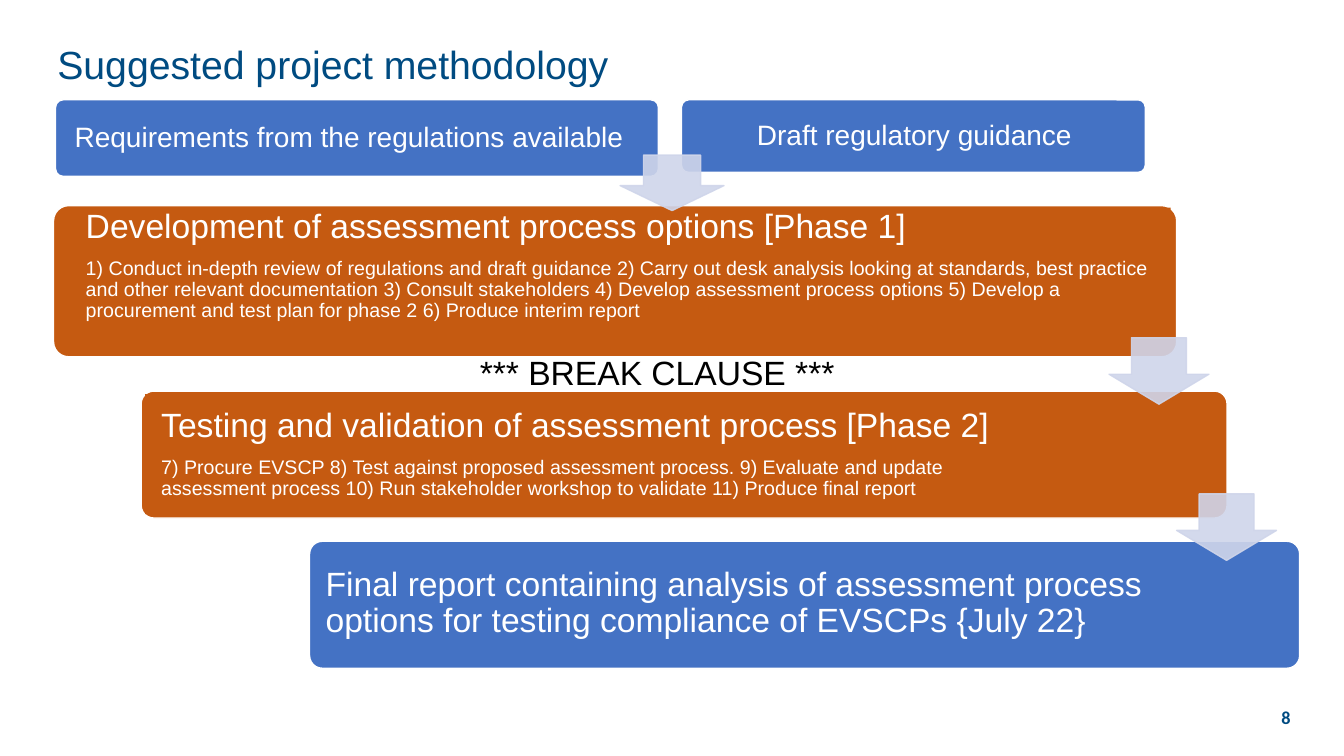
from lxml import etree
from pptx import Presentation
from pptx.dml.color import RGBColor
from pptx.enum.shapes import MSO_SHAPE as Shape
from pptx.enum.text import MSO_ANCHOR as Anchor, PP_ALIGN as Align
from pptx.oxml.ns import qn
from pptx.util import Inches, Pt

WIDE, HIGH = Inches(13.33), Inches(7.5)
NAVY, BLUE, RUST, PALE = "004B81", "4472C4", "C55A11", "CFD5EA"
WHITE, BLACK = "FFFFFF", "000000"
PAD = 0.16


def hue(code):
    return RGBColor.from_string(code)


def place(box):
    """Turn percentages of the slide into lengths."""
    return [int(share * side / 100) for share, side in zip(box, (WIDE, HIGH) * 2)]


def paint(shape, fill, line=None):
    shape.shadow.inherit = False
    shape.fill.solid()
    shape.fill.fore_color.rgb = hue(fill)
    if line:
        shape.line.color.rgb = hue(line)
        shape.line.width = Pt(1)
    else:
        shape.line.fill.background()


def write(shape, rows, color, align=Align.LEFT, anchor=Anchor.MIDDLE,
          font="Arial", bold=False, space=0.9, pads=None):
    """Fill a shape with rows of (text, size)."""
    frame = shape.text_frame
    frame.word_wrap = True
    frame.vertical_anchor = anchor
    if pads:
        (frame.margin_left, frame.margin_top,
         frame.margin_right, frame.margin_bottom) = map(Inches, pads)
    for spot, (text, size) in enumerate(rows):
        para = frame.add_paragraph() if spot else frame.paragraphs[0]
        para.alignment = align
        para.line_spacing = space
        if spot < len(rows) - 1:
            para.space_after = Pt(9)
        run = para.add_run()
        run.text = text
        run.font.name, run.font.size, run.font.bold = font, Pt(size), bold
        run.font.color.rgb = hue(color)


def note(slide, box, text, size, color, **style):
    write(slide.shapes.add_textbox(*place(box)), [(text, size)], color, **style)


def step(slide, bar, label, fill, rows, top=PAD, **style):
    """Draw a rounded bar with its label; phase labels are filled."""
    back = slide.shapes.add_shape(Shape.ROUNDED_RECTANGLE, *place(bar))
    back.adjustments[0] = 0.1
    paint(back, fill, WHITE)
    if fill == RUST:
        face = slide.shapes.add_shape(Shape.RECTANGLE, *place(label))
        paint(face, fill)
    else:
        face = slide.shapes.add_textbox(*place(label))
    write(face, rows, WHITE, pads=(PAD, top, PAD, PAD), **style)


def arrow(slide, box):
    shape = slide.shapes.add_shape(Shape.DOWN_ARROW, *place(box))
    shape.adjustments[0], shape.adjustments[1] = 0.55, 0.45
    paint(shape, PALE, PALE)
    for color in shape._element.spPr.iter(qn("a:srgbClr")):
        etree.SubElement(color, qn("a:alpha")).set("val", "90000")


def main():
    deck = Presentation()
    deck.slide_width, deck.slide_height = WIDE, HIGH
    slide = deck.slides.add_slide(deck.slide_layouts[6])

    note(slide, (3.53, 4.53, 93.17, 8.53), "Suggested project methodology", 28, NAVY)
    note(slide, (90.62, 92.27, 6.15, 5.33), "8", 13, NAVY,
         align=Align.RIGHT, font="Calibri", bold=True, space=1.0)

    step(slide, (4.13, 13.2, 44.86, 10.13), (4.35, 13.47, 43.29, 9.6), BLUE,
         [("Requirements from the regulations available", 20)])
    step(slide, (3.98, 27.2, 83.57, 20), (5.18, 27.47, 81.92, 18.8), RUST, [
        ("Development of assessment process options [Phase 1]", 24),
        ("1) Conduct in-depth review of regulations and draft guidance "
         "2) Carry out desk analysis looking at standards, best practice and "
         "other relevant documentation 3) Consult stakeholders "
         "4) Develop assessment process options 5) Develop a procurement and "
         "test plan for phase 2 6) Produce interim report", 14),
    ], top=0.02, anchor=Anchor.TOP)
    step(slide, (10.5, 51.73, 80.8, 16.8), (10.8, 52.13, 65.12, 15.87), RUST, [
        ("Testing and validation of assessment process [Phase 2]", 24),
        ("7) Procure EVSCP 8) Test against proposed assessment process. "
         "9) Evaluate and update assessment process 10) Run stakeholder "
         "workshop to validate 11) Produce final report", 14),
    ])
    arrow(slide, (82.52, 44.67, 7.43, 8.8))
    step(slide, (23.03, 71.6, 73.67, 16.8), (23.03, 71.87, 71.34, 15.87), BLUE,
         [("Final report containing analysis of assessment process options "
           "for testing compliance of EVSCPs {July 22}", 24)])
    arrow(slide, (87.55, 65.33, 7.43, 8.8))
    step(slide, (50.71, 13.2, 34.51, 9.6), (50.86, 13.47, 34.36, 9.07), BLUE,
         [("Draft regulatory guidance", 20)], align=Align.CENTER)
    arrow(slide, (46.14, 20.53, 7.73, 7.33))
    note(slide, (34.96, 45.87, 34.36, 6.67), "*** BREAK CLAUSE ***", 24, BLACK,
         anchor=Anchor.TOP, space=1.0)

    deck.save("out.pptx")


if __name__ == "__main__":
    main()
